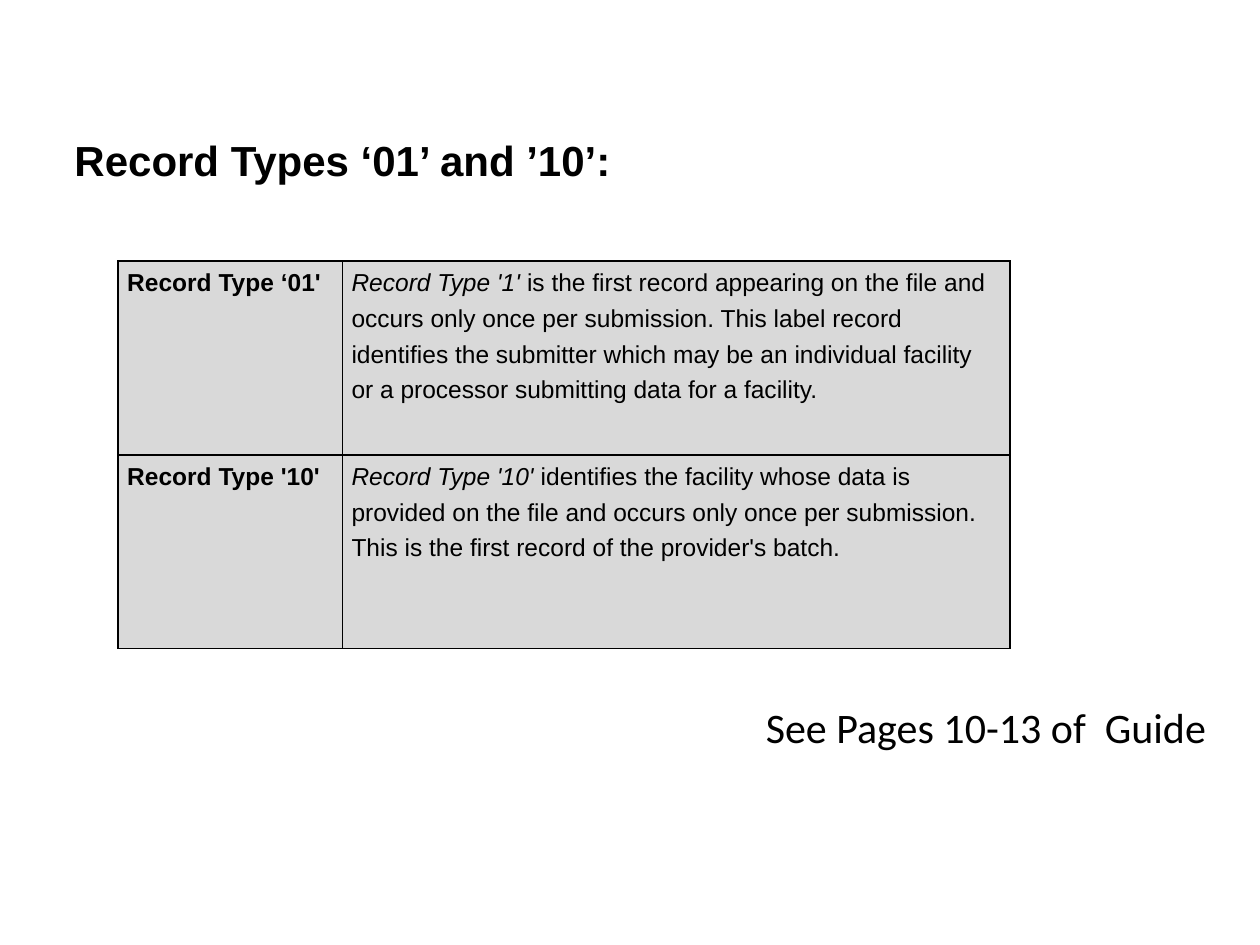
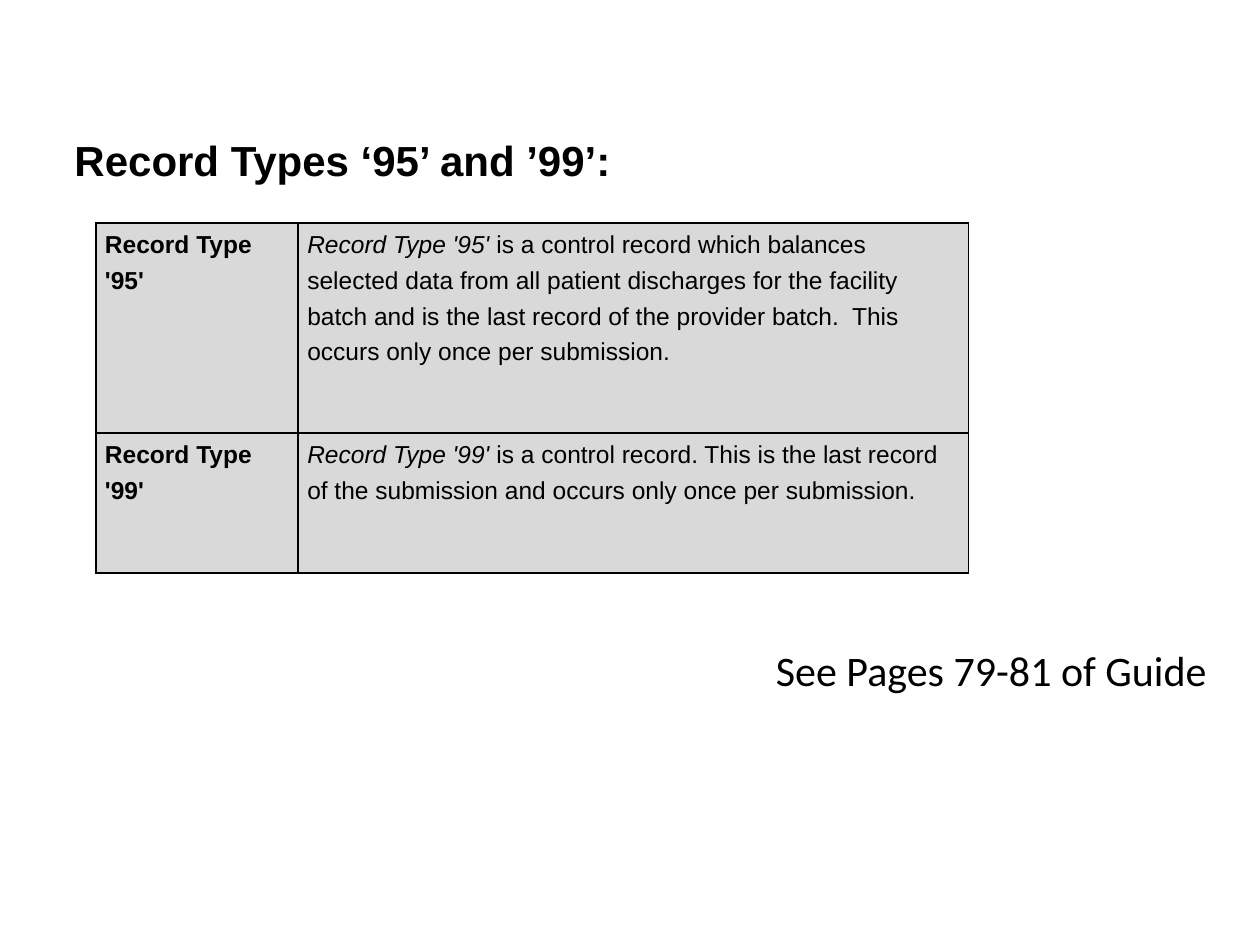
"""Build two slides that describe the record types of a submission file."""
from lxml import etree
from pptx import Presentation
from pptx.dml.color import RGBColor
from pptx.enum import text
from pptx.oxml import ns
from pptx.util import Pt

BLACK = RGBColor(0x00, 0x00, 0x00)
GRAY = RGBColor(0xD9, 0xD9, 0xD9)

RECORD_SLIDES = [
    {
        "title": "Record Types ‘01’ and ’10’:",
        "reference": "See Pages 10-13 of  Guide",
        "reference_box": (430.5, 397.5, 267, 36),
        "table_origin": (67.5, 149.2),
        "columns": (128.2, 381.6),
        "rows": (110.7, 110.7),
        "records": [
            ("Record Type ‘01'", "Record Type '1' ",
             "is the first record appearing on the file and occurs only once per "
             "submission. This label record identifies the submitter which may be an "
             "individual facility or a processor submitting data for a facility."),
            ("Record Type '10'", "Record Type '10' ",
             "identifies the facility whose data is provided on the file and occurs "
             "only once per submission. This is the first record of the provider's batch."),
        ],
    },
    {
        "title": "Record Types ‘95’ and ’99’:",
        "reference": "See Pages 79-81 of Guide",
        "reference_box": (436.3, 364.5, 261.4, 36),
        "table_origin": (54.8, 127.5),
        "columns": (115.6, 383),
        "rows": (120, 80),
        "records": [
            ("Record Type '95'", "Record Type '95' ",
             "is a control record which balances selected data from all patient "
             "discharges for the facility batch and is the last record of the provider "
             "batch.  This occurs only once per submission."),
            ("Record Type '99'", "Record Type '99' ",
             "is a control record. This is the last record of the submission and "
             "occurs only once per submission."),
        ],
    },
]


def add_label(slide, box, wording, font_name, bold=False):
    shape = slide.shapes.add_textbox(*map(Pt, box))
    frame = shape.text_frame
    frame.text = wording
    frame.word_wrap = bold
    frame.vertical_anchor = text.MSO_ANCHOR.MIDDLE if bold else text.MSO_ANCHOR.TOP
    font = frame.paragraphs[0].runs[0].font
    font.name, font.size, font.bold = font_name, Pt(24), bold
    font.color.rgb = BLACK


def fill_cell(cell, pieces):
    cell.margin_left = cell.margin_right = Pt(5.2)
    cell.margin_top = cell.margin_bottom = 0
    properties = cell._tc.get_or_add_tcPr()
    for side in ("lnL", "lnR", "lnT", "lnB"):
        line = etree.SubElement(properties, ns.qn(f"a:{side}"), w=str(Pt(1)))
        line_fill = etree.SubElement(line, ns.qn("a:solidFill"))
        etree.SubElement(line_fill, ns.qn("a:srgbClr"), val=str(BLACK))
    cell.fill.solid()
    cell.fill.fore_color.rgb = GRAY
    paragraph = cell.text_frame.paragraphs[0]
    paragraph.line_spacing = 1.3
    paragraph.space_after = Pt(3)
    for wording, bold, italic in pieces:
        run = paragraph.add_run()
        run.text = wording
        run.font.name, run.font.size = "Arial", Pt(14)
        run.font.bold, run.font.italic = bold, italic
        run.font.color.rgb = BLACK


presentation = Presentation()
presentation.slide_width, presentation.slide_height = Pt(720), Pt(540)

for content in RECORD_SLIDES:
    slide = presentation.slides.add_slide(presentation.slide_layouts[6])
    add_label(slide, (35.5, 55.5, 551, 72), content["title"], "Arial", bold=True)
    add_label(slide, content["reference_box"], content["reference"], "Calibri")

    columns, rows = content["columns"], content["rows"]
    left, top = content["table_origin"]
    table = slide.shapes.add_table(
        len(rows), len(columns), Pt(left), Pt(top), Pt(sum(columns)), Pt(sum(rows))
    ).table
    table.first_row = table.horz_banding = False
    for column, width in zip(table.columns, columns):
        column.width = Pt(width)
    for row, height, (name, lead, description) in zip(table.rows, rows, content["records"]):
        row.height = Pt(height)
        fill_cell(row.cells[0], [(name, True, False)])
        fill_cell(row.cells[1], [(lead, False, True), (description, False, False)])

presentation.save("out.pptx")
